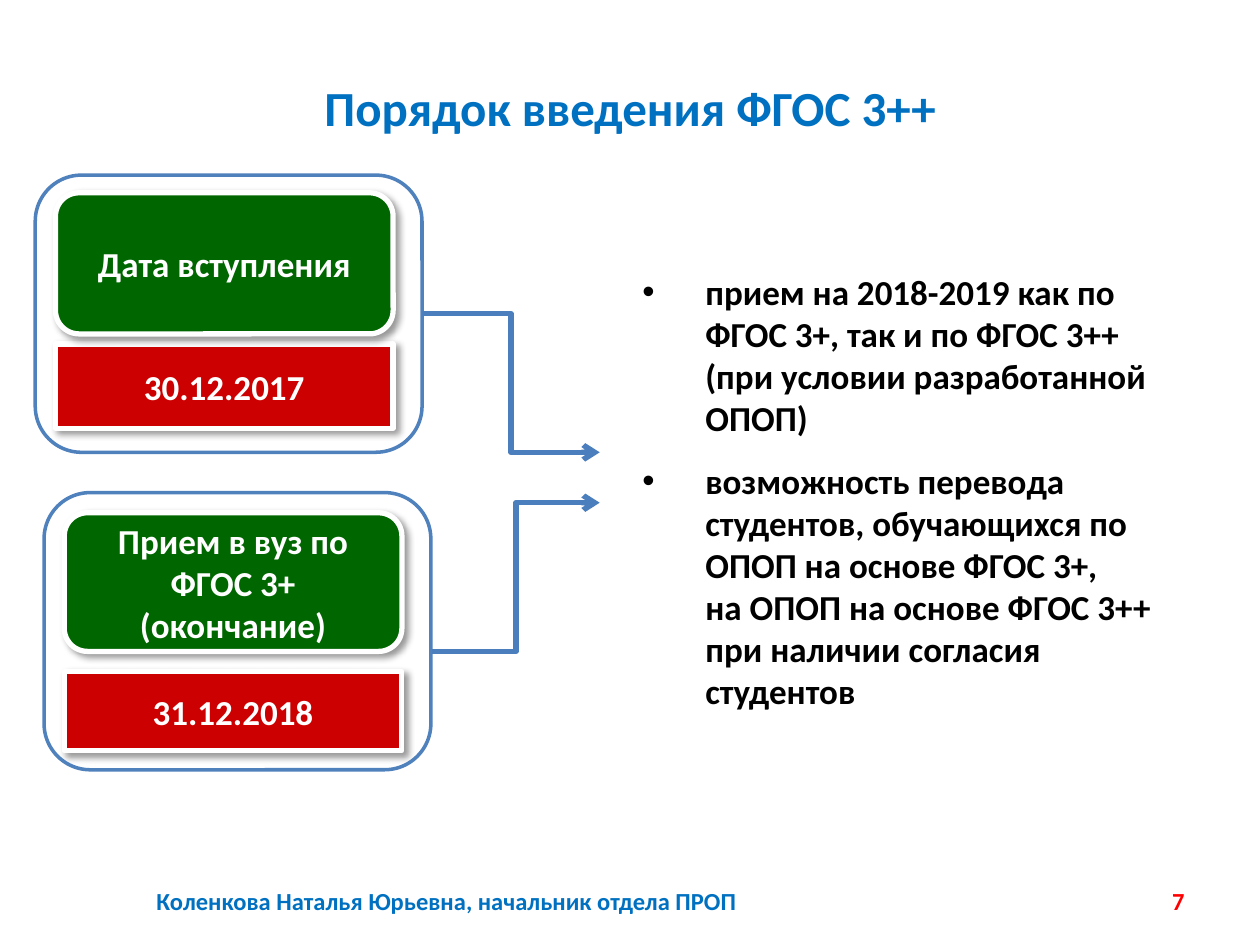
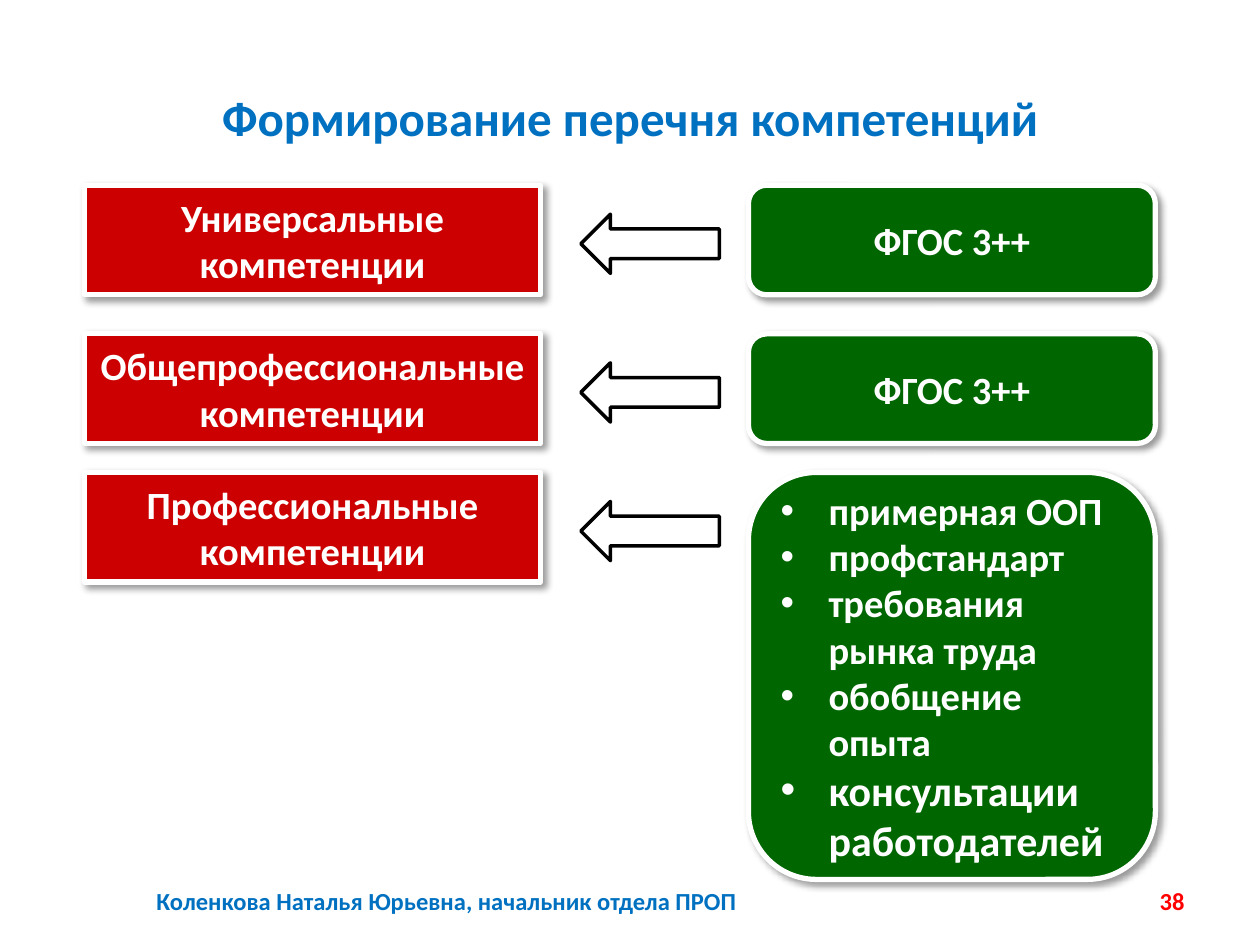
from lxml import etree
from pptx import Presentation
from pptx import util as u
from pptx.dml.color import RGBColor
from pptx.enum import shapes, text
from pptx.oxml.ns import qn

COLORS = {
    "white": "FFFFFF", "black": "000000", "title": "0070C0", "number": "FF0000",
    "red": "CC0000", "green": "006600", "frame": "4F81BD", "link": "4B7EBC",
}
FONT = "Calibri"
AUTHOR = "Коленкова Наталья Юрьевна, начальник отдела ПРОП"
RECT = shapes.MSO_SHAPE.RECTANGLE
ROUND = shapes.MSO_SHAPE.ROUNDED_RECTANGLE
CENTER, LEFT, RIGHT = text.PP_ALIGN.CENTER, text.PP_ALIGN.LEFT, text.PP_ALIGN.RIGHT


def rgb(name):
    return RGBColor.from_string(COLORS[name])


def child(parent, tag, **attrs):
    return etree.SubElement(parent, qn(tag), {k: str(v) for k, v in attrs.items()})


class Deck:
    """Shared style and the current slide."""

    def __init__(self):
        self.prs = Presentation()
        self.prs.slide_width, self.prs.slide_height = u.Inches(10), u.Inches(7.5)
        self.s = None

    def slide(self, title, title_height, number):
        self.s = self.prs.slides.add_slide(self.prs.slide_layouts[6])
        self.label((0.5, 0.3, 9, title_height), [title], 28, "title")
        self.label((0.51, 6.95, 6.07, 0.4), [AUTHOR], 14, "title")
        self.label((7.17, 6.95, 2.33, 0.4), [number], 14, "number", RIGHT)

    def set_text(self, sp, lines, size, color, align=CENTER, indent=0, before=0):
        tf = sp.text_frame
        tf.word_wrap = True
        tf.vertical_anchor = text.MSO_ANCHOR.MIDDLE
        for i, line in enumerate(lines):
            p = tf.paragraphs[0] if i == 0 else tf.add_paragraph()
            p.text = line
            p.alignment = align
            p.space_before = u.Pt(before)
            p.font.name, p.font.size, p.font.bold = FONT, u.Pt(size), True
            p.font.color.rgb = rgb(color)
            if indent:
                self.bullet(p, indent)
        return tf

    def bullet(self, p, indent):
        pPr = p._p.get_or_add_pPr()
        pPr.set("marL", str(u.Inches(indent)))
        pPr.set("indent", str(-u.Inches(indent)))
        # Bullet elements come before the default run properties
        font = etree.Element(qn("a:buFont"), typeface="Arial")
        char = etree.Element(qn("a:buChar"), char="•")
        defaults = pPr.find(qn("a:defRPr"))
        defaults.addprevious(font)
        defaults.addprevious(char)

    def label(self, box, lines, size, color, align=CENTER, **style):
        sp = self.s.shapes.add_textbox(*map(u.Inches, box))
        return self.set_text(sp, lines, size, color, align, **style)

    def shape(self, kind, box, fill, line, width):
        sp = self.s.shapes.add_shape(kind, *map(u.Inches, box))
        if fill:
            sp.fill.solid()
            sp.fill.fore_color.rgb = rgb(fill)
        else:
            sp.fill.background()
        sp.line.color.rgb = rgb(line)
        sp.line.width = u.Pt(width)
        sp.shadow.inherit = False
        return sp

    def card(self, kind, box, fill, lines, size, **style):
        sp = self.shape(kind, box, fill, "white", 3)
        effects = sp._element.spPr.find(qn("a:effectLst"))
        shadow = child(effects, "a:outerShdw", blurRad=u.Pt(4), dist=u.Pt(3),
                       dir=45 * 60000, algn="tl", rotWithShape=0)
        child(child(shadow, "a:srgbClr", val=COLORS["black"]), "a:alpha", val=40000)
        return self.set_text(sp, lines, size, "white", **style)

    def elbow(self, start, end):
        c = self.s.shapes.add_connector(shapes.MSO_CONNECTOR.ELBOW,
                                        *map(u.Inches, start + end))
        c.line.color.rgb = rgb("link")
        c.line.width = u.Pt(3)
        spPr = c._element.spPr
        child(spPr.find(qn("a:ln")), "a:tailEnd", type="arrow")
        child(spPr, "a:effectLst")


def introduction(d):
    d.slide("Порядок введения ФГОС 3++", 1.09, "7")

    # Framed dates: frame corner, caption top and height, date top and height
    groups = [
        (0.28, 1.39, "Дата вступления", 1.53, 1.12, "30.12.2017", 2.73, 0.67),
        (0.35, 3.91, "Прием в вуз по ФГОС 3+ (окончание)", 4.07, 1.1,
         "31.12.2018", 5.33, 0.63),
    ]
    for x, y, caption, cap_y, cap_h, date, date_y, date_h in groups:
        d.card(RECT, (x + 0.16, date_y, 2.68, date_h), "red", [date], 20)
        d.card(ROUND, (x + 0.16, cap_y, 2.68, cap_h), "green", [caption], 20)
        d.shape(ROUND, (x, y, 3.07, 2.2), None, "frame", 2)

    # Links to the consequences
    d.elbow((3.35, 2.49), (4.76, 3.59))
    d.elbow((3.43, 5.17), (4.76, 3.99))

    # Consequences
    tf = d.label((5, 2.1, 4.5, 4.1), [
        "прием на 2018-2019 как по ФГОС 3+, так и по ФГОС 3++ "
        "(при условии разработанной ОПОП)",
        "возможность перевода студентов, обучающихся по ОПОП на основе ФГОС 3+, \v"
        "на ОПОП на основе ФГОС 3++ при наличии согласия студентов",
    ], 20, "black", LEFT, indent=0.5, before=12)
    tf.vertical_anchor = text.MSO_ANCHOR.TOP


def competencies(d):
    d.slide("Формирование перечня компетенций", 1.25, "38")

    # Each row: competency, arrow, its sources
    sources = ["примерная ООП", "профстандарт", "требования рынка труда",
               "обобщение опыта", "консультации работодателей"]
    rows = [
        (1.47, "Универсальные", ["ФГОС 3++"]),
        (2.65, "Общепрофессиональные", ["ФГОС 3++"]),
        (3.75, "Профессиональные", sources),
    ]
    for y, name, origin in rows:
        d.card(RECT, (0.67, y, 3.62, 0.87), "red", [name + " компетенции"], 22)
        d.shape(shapes.MSO_SHAPE.LEFT_ARROW, (4.61, y + 0.23, 1.1, 0.47),
                "white", "black", 2)
        if len(origin) == 1:
            d.card(ROUND, (5.94, y, 3.23, 0.87), "green", origin, 22)
        else:
            tf = d.card(ROUND, (5.94, y, 3.23, 3.23), "green", origin, 22,
                        align=LEFT, indent=0.38)
            tf.paragraphs[-1].font.size = u.Pt(24)


def main():
    d = Deck()
    introduction(d)
    competencies(d)
    d.prs.save("out.pptx")


if __name__ == "__main__":
    main()
